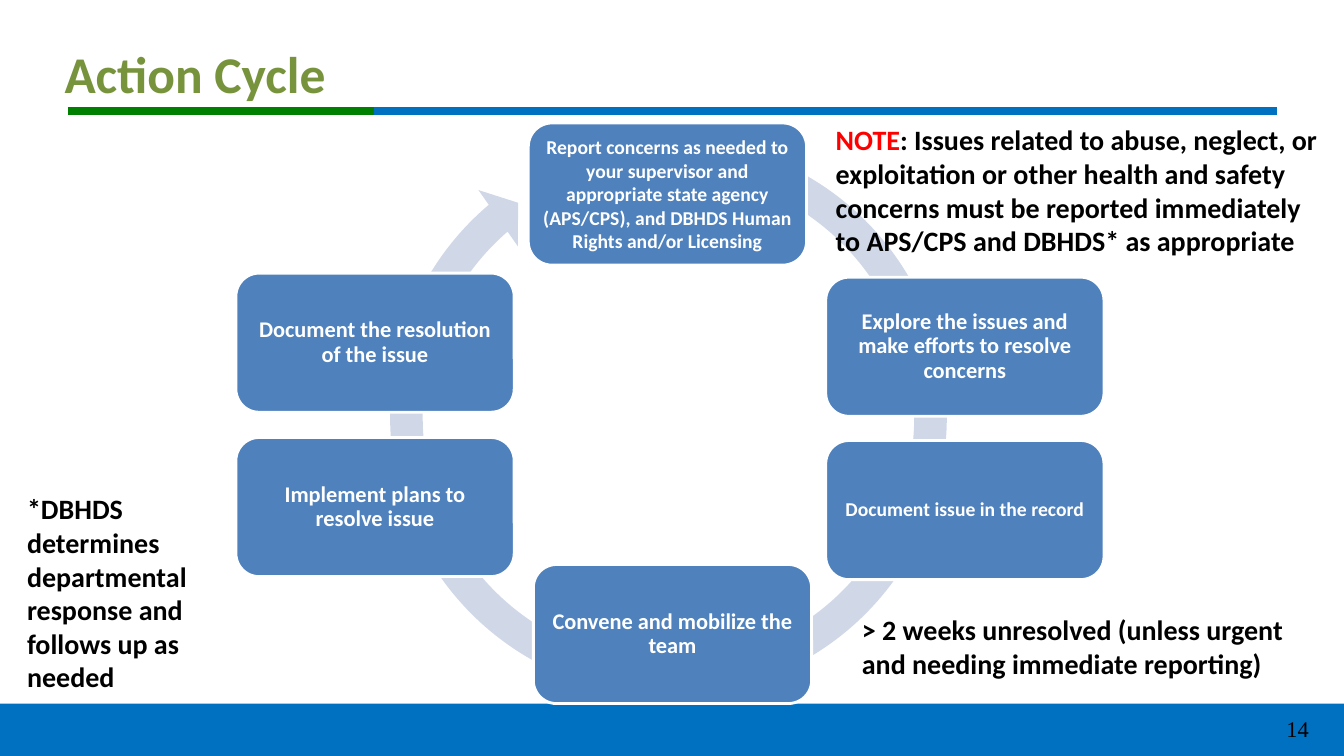
import pptx
import pptx.dml.color
import pptx.enum.shapes
import pptx.enum.text
import pptx.oxml
import pptx.util
from pptx.util import Inches

SHAPE = pptx.enum.shapes.MSO_SHAPE
CENTER = pptx.enum.text.PP_ALIGN.CENTER
MIDDLE = pptx.enum.text.MSO_ANCHOR.MIDDLE


def paint(target, color):
    """Give a fill, line or font one solid colour."""
    if hasattr(target, "solid"):
        target.solid()
        target.fore_color.rgb = pptx.dml.color.RGBColor.from_string(color)
    else:
        target.color.rgb = pptx.dml.color.RGBColor.from_string(color)


def write(box, spans, margins, size, bold=True, name="Calibri", **layout):
    """Fill a box with one paragraph of (text, colour) spans."""
    frame = box.text_frame
    frame.word_wrap = True
    for side, margin in zip(("left", "top", "right", "bottom"), margins):
        setattr(frame, f"margin_{side}", Inches(margin))
    para = frame.paragraphs[0]
    for key, value in layout.items():
        setattr(para, key, value)
    for text, color in spans:
        span = para.add_run()
        span.text = text
        looks = {"size": pptx.util.Pt(size), "bold": bold, "name": name}
        for key, value in looks.items():
            setattr(span.font, key, value)
        paint(span.font, color)


deck = pptx.Presentation()
deck.slide_width = Inches(13.33)
deck.slide_height = Inches(7.5)
page = deck.slides.add_slide(deck.slide_layouts[6])

# Footer band
footer = page.shapes.add_shape(
    SHAPE.RECTANGLE, Inches(0), Inches(6.98), Inches(13.33), Inches(0.52))
footer.shadow.inherit = False
paint(footer.fill, "0070C0")
footer.line.fill.background()

# Two-colour rule under the title
for start, end, color in ((0.67, 3.86, "008000"), (3.71, 12.67, "0070C0")):
    rule = page.shapes.add_connector(
        pptx.enum.shapes.MSO_CONNECTOR.STRAIGHT,
        Inches(start), Inches(1.1), Inches(end), Inches(1.1))
    rule.line.width = pptx.util.Pt(6)
    paint(rule.line, color)
    rule._element.spPr.append(pptx.oxml.parse_xml(
        '<a:effectLst xmlns:a="http://schemas.openxmlformats.org/drawingml/2006/main"/>'))

# Ring arrow behind the steps
ring = page.shapes.add_shape(
    SHAPE.CIRCULAR_ARROW, Inches(3.69), Inches(1.2), Inches(5.88), Inches(5.88))
ring.shadow.inherit = False
for index, value in enumerate((0.055, 3.307, 137.676, 173.91, 0.058)):
    ring.adjustments[index] = value
paint(ring.fill, "D0D8E8")
ring.line.fill.background()

# Steps: left, top, height, font size, margin, line spacing, text
steps = (
    (5.24, 1.22, 1.41, 14, 0.06, 1.0,
     "Report concerns as needed to your supervisor and appropriate state agency "
     "(APS/CPS), and DBHDS Human Rights and/or Licensing"),
    (5.29, 5.6, 1.38, 16, 0.07, 0.9, "Convene and mobilize the team"),
    (8.19, 4.37, 1.38, 14, 0.06, 0.9, "Document issue in the record"),
    (8.19, 2.75, 1.38, 16, 0.07, 0.9,
     "Explore the issues and make efforts to resolve concerns"),
    (2.34, 2.71, 1.38, 16, 0.07, 0.9, "Document the resolution of the issue"),
    (2.34, 4.34, 1.38, 16, 0.1, 0.9, "Implement plans to resolve issue"),
)
for left, top, height, size, margin, spacing, text in steps:
    step = page.shapes.add_shape(
        SHAPE.ROUNDED_RECTANGLE,
        Inches(left), Inches(top), Inches(2.76), Inches(height))
    step.shadow.inherit = False
    paint(step.fill, "4F81BD")
    paint(step.line, "FFFFFF")
    step.line.width = pptx.util.Pt(2)
    step.text_frame.vertical_anchor = MIDDLE
    write(step, [(text, "FFFFFF")], [margin] * 4, size,
          alignment=CENTER, line_spacing=spacing)

# Title
title = page.shapes.add_textbox(
    Inches(0.64), Inches(0.42), Inches(11.34), Inches(0.62))
write(title, [("Action Cycle", "77933C")], [0] * 4, 36.8)

# Notes around the cycle
notes = (
    (8.45, 6.03, 4.53, 0.77,
     [("> 2 weeks unresolved (unless urgent and needing immediate reporting)", "000000")]),
    (0.17, 4.83, 2.47, 2.12,
     [("*DBHDS determines departmental response and follows up as needed", "000000")]),
    (8.19, 1.17, 5.05, 1.45,
     [("NOTE", "FF0000"),
      (": Issues related to abuse, neglect, or exploitation or other health and safety "
       "concerns must be reported immediately to APS/CPS and DBHDS* as appropriate",
       "000000")]),
)
for left, top, width, height, spans in notes:
    note = page.shapes.add_textbox(
        Inches(left), Inches(top), Inches(width), Inches(height))
    write(note, spans, (0.1, 0.05, 0.1, 0.05), 20)

# Page number
number = page.shapes.add_textbox(
    Inches(12.68), Inches(7.24), Inches(0.6), Inches(0.25))
write(number, [("14", "000000")], (0.08, 0, 0, 0), 16, bold=False,
      name="Times New Roman", line_spacing=pptx.util.Pt(9))

deck.save("out.pptx")
